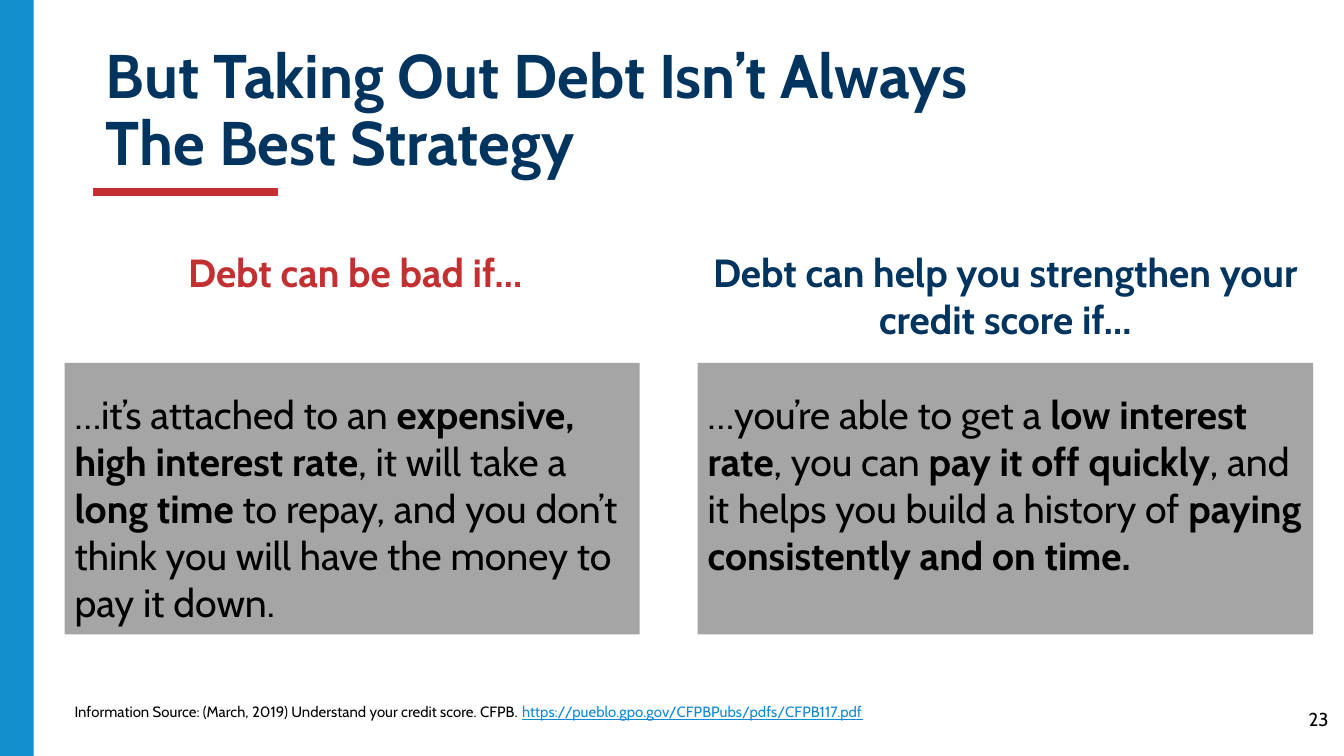
from pptx import Presentation
from pptx.dml.color import RGBColor
from pptx.enum.shapes import MSO_CONNECTOR, MSO_SHAPE
from pptx.enum.text import MSO_ANCHOR, PP_ALIGN
from pptx.util import Inches, Pt
from lxml.etree import SubElement
from pptx.oxml.ns import qn

FONT = "Cabin"
NAVY, RED, BLUE, LINK = "01345E", "C33032", "1290CE", "1089D6"
GRAY, BLACK = "A5A5A5", "000000"
SLIDE_WIDTH = 10
SLIDE_HEIGHT = SLIDE_WIDTH * 9 / 16

TITLE = "But Taking Out Debt Isn’t Always The Best Strategy"
COLUMNS = [
    {
        "panel": (5.19, 2.7, 4.58, 2.02), "text": (5.19, 1.81, 4.58, 3.26),
        "color": NAVY, "gap_lines": 1,
        "heading": "Debt can help you strengthen your credit score if…",
        "body": [
            ("…you’re able to get a ", False),
            ("low interest rate", True),
            (", you can ", False),
            ("pay it off quickly", True),
            (", and it helps you build a history of ", False),
            ("paying consistently and on time.", True),
        ],
    },
    {
        "panel": (0.48, 2.7, 4.28, 2.02), "text": (0.48, 1.81, 4.39, 2.9),
        "color": RED, "gap_lines": 2,
        "heading": "Debt can be bad if… ",
        "body": [
            ("…it’s attached to an ", False),
            ("expensive, high interest rate", True),
            (", it will take a ", False),
            ("long time ", True),
            ("to repay, and you don’t think you will have the money to pay it down.", False),
        ],
    },
]
SOURCE = "Information Source: (March, 2019) Understand your credit score. CFPB. "
SOURCE_URL = "https://pueblo.gpo.gov/CFPBPubs/pdfs/CFPB117.pdf"
PAGE_NUMBER = "23"

COLUMN_SIZE, COLUMN_LINE = 21, 25.5
FOOTER_TOP = 5.19


def rgb(color):
    """Turn a hex string into a colour."""
    return RGBColor.from_string(color)


def add_block(slide, box, color):
    """Add a plain filled rectangle."""
    block = slide.shapes.add_shape(MSO_SHAPE.RECTANGLE, *map(Inches, box))
    block.shadow.inherit = False
    block.fill.solid()
    block.fill.fore_color.rgb = rgb(color)
    block.line.fill.background()


def add_frame(slide, box, side=5.4, top=2.7):
    """Add an empty wrapping text box with insets in points."""
    frame = slide.shapes.add_textbox(*map(Inches, box)).text_frame
    frame.word_wrap = True
    frame.vertical_anchor = MSO_ANCHOR.TOP
    frame.margin_left = frame.margin_right = Pt(side)
    frame.margin_top = frame.margin_bottom = Pt(top)
    return frame


def fill_paragraph(paragraph, runs, size, align=PP_ALIGN.LEFT):
    """Add (text, colour, bold, underline) runs to a paragraph."""
    paragraph.alignment = align
    for text, color, bold, underline in runs:
        run = paragraph.add_run()
        run.text = text
        run.font.name = FONT
        run.font.size = Pt(size)
        run.font.bold = bold
        run.font.underline = underline
        run.font.color.rgb = rgb(color)


def add_title(slide):
    """Add the title and the red rule below it."""
    rule = slide.shapes.add_connector(
        MSO_CONNECTOR.STRAIGHT, Inches(0.69), Inches(1.43), Inches(2.07), Inches(1.43))
    rule.line.color.rgb = rgb(RED)
    rule.line.width = Pt(4.5)
    SubElement(rule.element.spPr, qn("a:effectLst"))
    title = add_frame(slide, (0.69, 0.24, 7.3, 1.02), 7.2, 7.2).paragraphs[0]
    title.line_spacing = 0.9
    fill_paragraph(title, [(TITLE, NAVY, True, False)], 33)


def add_column_text(slide, column):
    """Add a centred heading with its text below."""
    frame = add_frame(slide, column["text"])
    fill_paragraph(frame.paragraphs[0], [(column["heading"], column["color"], True, False)],
                   COLUMN_SIZE, PP_ALIGN.CENTER)
    body = frame.add_paragraph()
    body.space_before = Pt(column["gap_lines"] * COLUMN_LINE)
    fill_paragraph(body, [(text, BLACK, bold, False) for text, bold in column["body"]],
                   COLUMN_SIZE)


def main():
    """Build the slide and save it."""
    deck = Presentation()
    deck.slide_width, deck.slide_height = Inches(SLIDE_WIDTH), Inches(SLIDE_HEIGHT)
    slide = deck.slides.add_slide(deck.slide_layouts[6])
    add_block(slide, (0, 0, 0.25, SLIDE_HEIGHT), BLUE)
    for column in reversed(COLUMNS):
        add_block(slide, column["panel"], GRAY)
    add_title(slide)
    for column in COLUMNS:
        add_column_text(slide, column)
    source = add_frame(slide, (0.48, FOOTER_TOP, 6.5, 0.21)).paragraphs[0]
    fill_paragraph(source, [(SOURCE, BLACK, False, False), (SOURCE_URL, LINK, False, True)], 8)
    number = add_frame(slide, (9.36, FOOTER_TOP, 0.6, 0.43), top=5.4).paragraphs[0]
    fill_paragraph(number, [(PAGE_NUMBER, BLACK, False, False)], 10, PP_ALIGN.RIGHT)
    deck.save("out.pptx")


if __name__ == "__main__":
    main()
